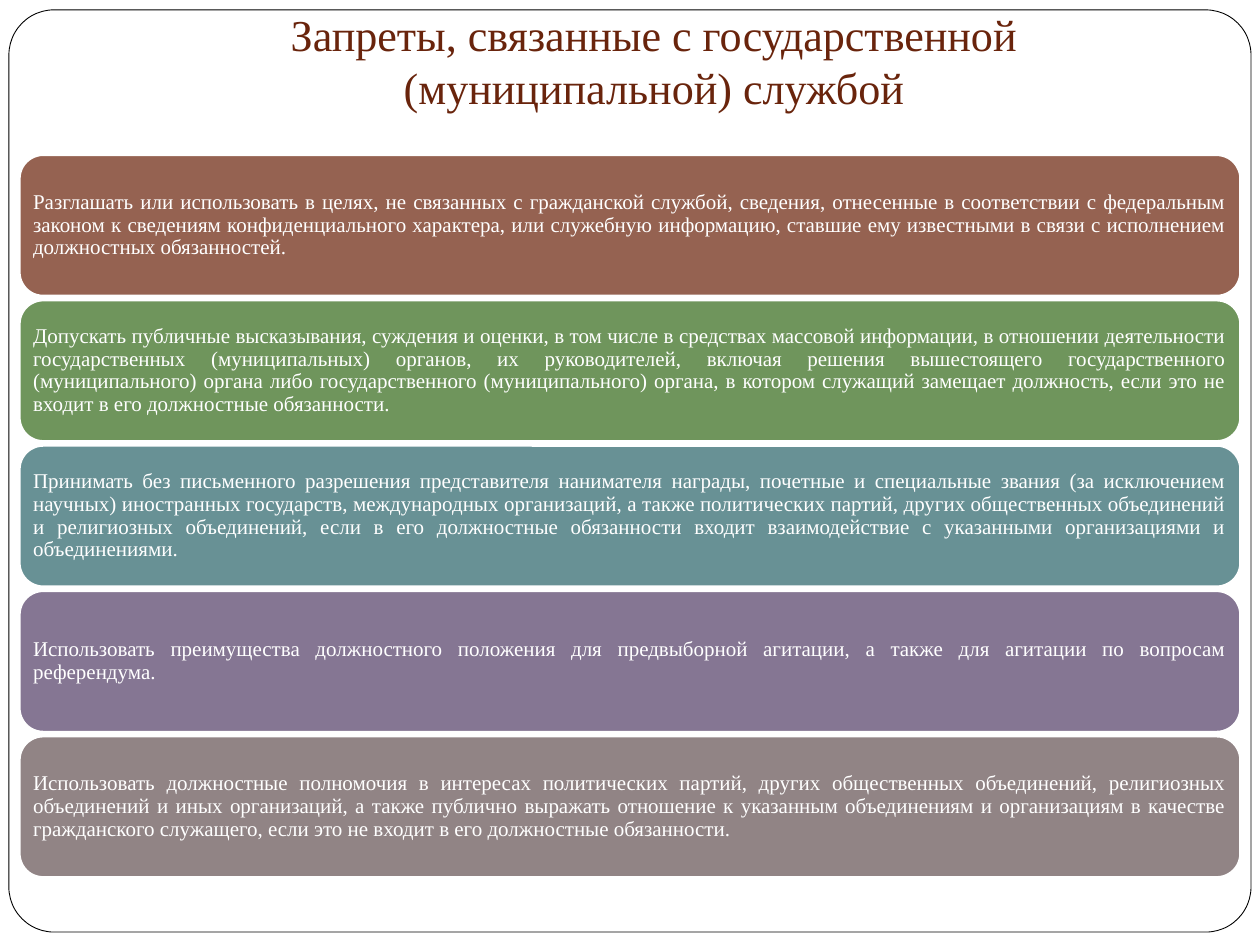
import pptx
import pptx.dml.color
import pptx.enum.shapes
import pptx.enum.text
import pptx.util
from pptx.dml.color import RGBColor
from pptx.util import Cm

FONT = "Times New Roman"
WHITE = RGBColor(0xFF, 0xFF, 0xFF)
BLACK = RGBColor(0x00, 0x00, 0x00)
TITLE_COLOR = RGBColor(0x69, 0x24, 0x0C)
BROWN = RGBColor(0x95, 0x62, 0x51)
GREEN = RGBColor(0x6F, 0x95, 0x5C)
TEAL = RGBColor(0x68, 0x91, 0x95)
VIOLET = RGBColor(0x85, 0x76, 0x93)
GREY = RGBColor(0x91, 0x84, 0x85)

TITLE = "Запреты, связанные с государственной (муниципальной) службой"
PROHIBITIONS = [
    (BROWN, "Разглашать или использовать в целях, не связанных с гражданской службой, сведения, "
            "отнесенные в соответствии с федеральным законом к сведениям конфиденциального характера, "
            "или служебную информацию, ставшие ему известными в связи с исполнением должностных "
            "обязанностей."),
    (GREEN, "Допускать публичные высказывания, суждения и оценки, в том числе в средствах массовой "
            "информации, в отношении деятельности государственных (муниципальных) органов, их "
            "руководителей, включая решения вышестоящего государственного (муниципального) органа "
            "либо государственного (муниципального) органа, в котором служащий замещает должность, "
            "если это не входит в его должностные обязанности."),
    (TEAL, "Принимать без письменного разрешения представителя нанимателя награды, почетные и "
           "специальные звания (за исключением научных) иностранных государств, международных "
           "организаций, а также политических партий, других общественных объединений и религиозных "
           "объединений, если в его должностные обязанности входит взаимодействие с указанными "
           "организациями и объединениями."),
    (VIOLET, "Использовать преимущества должностного положения для предвыборной агитации, а также "
             "для агитации по вопросам референдума."),
    (GREY, "Использовать должностные полномочия в интересах политических партий, других общественных "
           "объединений, религиозных объединений и иных организаций, а также публично выражать "
           "отношение к указанным объединениям и организациям в качестве гражданского служащего, "
           "если это не входит в его должностные обязанности."),
]

BAR_TOP, BAR_HEIGHT, BAR_PITCH = 3.13, 2.83, 2.93


def add_rounded_box(slide, left, top, width, height, fill, line, line_width):
    """Add a flat rounded rectangle measured in centimetres."""
    shape = slide.shapes.add_shape(
        pptx.enum.shapes.MSO_SHAPE.ROUNDED_RECTANGLE,
        Cm(left), Cm(top), Cm(width), Cm(height))
    shape.shadow.inherit = False
    shape.fill.solid()
    shape.fill.fore_color.rgb = fill
    shape.line.color.rgb = line
    shape.line.width = pptx.util.Pt(line_width)
    return shape


def write_text(shape, text, size, color, alignment, anchor, margins):
    """Fill a shape with one formatted paragraph; margins run left, top, right, bottom."""
    text_frame = shape.text_frame
    text_frame.text = text
    text_frame.word_wrap = True
    text_frame.auto_size = pptx.enum.text.MSO_AUTO_SIZE.NONE
    text_frame.vertical_anchor = anchor
    (text_frame.margin_left, text_frame.margin_top,
     text_frame.margin_right, text_frame.margin_bottom) = map(Cm, margins)
    paragraph = text_frame.paragraphs[0]
    paragraph.alignment = alignment
    font = paragraph.runs[0].font
    font.name = FONT
    font.size = pptx.util.Pt(size)
    font.color.rgb = color
    return paragraph


def add_frame(slide):
    """Add the thin rounded frame around the slide."""
    frame = add_rounded_box(slide, 0.18, 0.2, 25.04, 18.59, WHITE, BLACK, 0.5)
    frame.adjustments[0] = 0.049


def add_prohibition(slide, index, color, text):
    """Add one coloured bar of the vertical list."""
    bar = add_rounded_box(slide, 0.4, BAR_TOP + index * BAR_PITCH, 24.6, BAR_HEIGHT,
                          color, WHITE, 1)
    paragraph = write_text(bar, text, 12, WHITE, pptx.enum.text.PP_ALIGN.JUSTIFY,
                           pptx.enum.text.MSO_ANCHOR.MIDDLE, (0.13, 0.13, 0.13, 0.13))
    paragraph.line_spacing = 0.9


def place_title(slide):
    """Position the title placeholder in front of the frame and fill it."""
    title = slide.shapes.title
    title.left, title.top, title.width, title.height = map(Cm, (2.39, 0.79, 21.59, 1.75))
    write_text(title, TITLE, 25.2, TITLE_COLOR, pptx.enum.text.PP_ALIGN.CENTER,
               pptx.enum.text.MSO_ANCHOR.BOTTOM, (0.25, 0.13, 0.25, 0.25))
    title.element.getparent().append(title.element)


def main():
    """Build and save the slide."""
    presentation = pptx.Presentation()
    presentation.slide_width, presentation.slide_height = Cm(25.4), Cm(19.05)
    slide = presentation.slides.add_slide(presentation.slide_layouts[5])
    add_frame(slide)
    for index, (color, text) in enumerate(PROHIBITIONS):
        add_prohibition(slide, index, color, text)
    place_title(slide)
    presentation.save("out.pptx")


if __name__ == "__main__":
    main()
